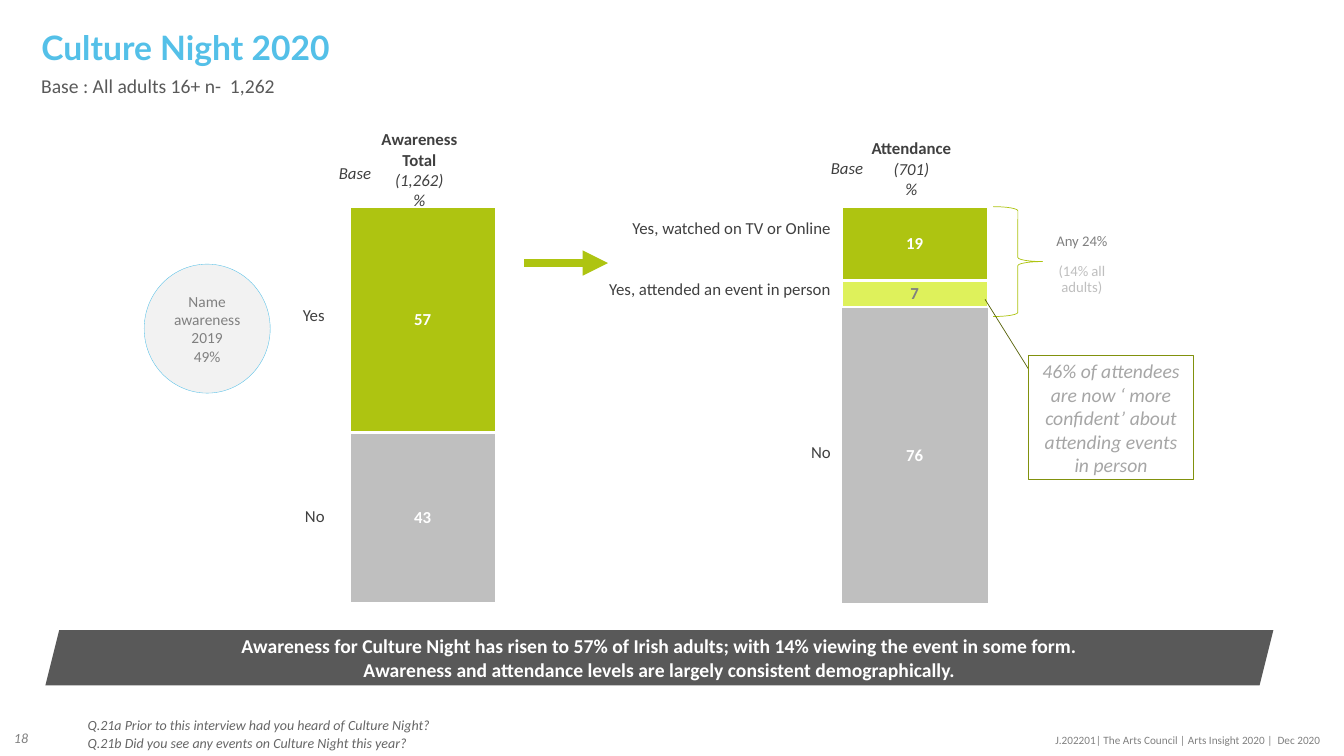
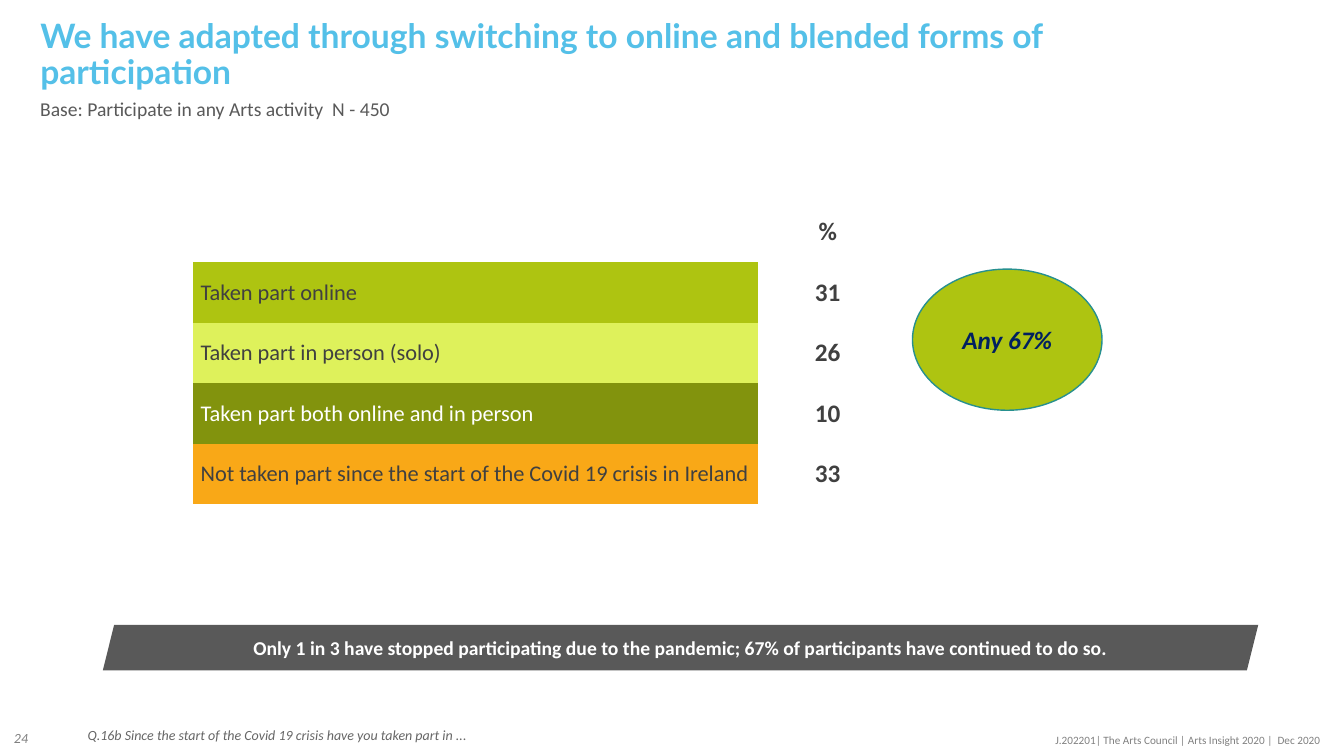
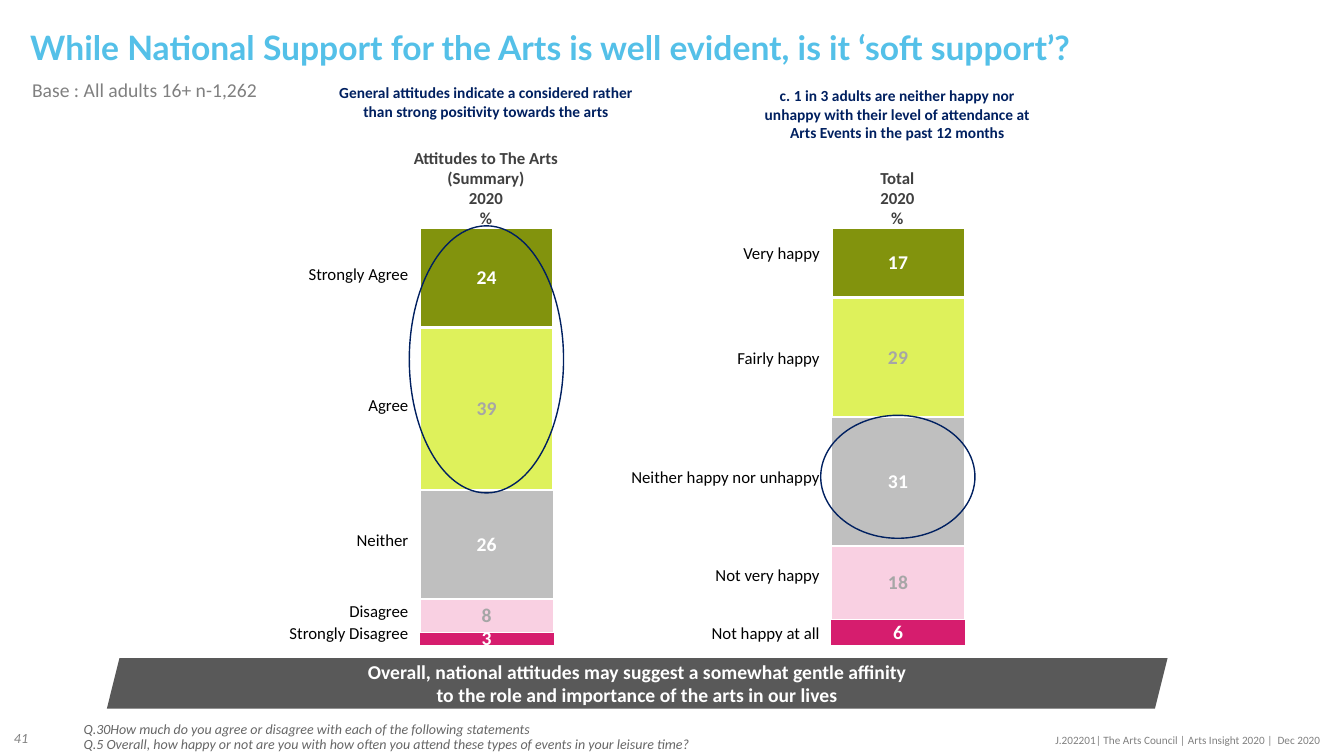
from lxml.etree import SubElement
from pptx import Presentation
from pptx.chart.data import CategoryChartData
from pptx.dml.color import RGBColor
from pptx.enum.chart import XL_CHART_TYPE as ChartType, XL_LABEL_POSITION as LabelPos
from pptx.enum.shapes import MSO_CONNECTOR as Connector, MSO_SHAPE as Shape
from pptx.enum.text import MSO_ANCHOR as Anchor, MSO_AUTO_SIZE as AutoSize, PP_ALIGN as Align
from pptx.oxml.ns import qn
from pptx.util import Inches, Pt

COLORS = {
    "sky": "54C0E8", "white": "FFFFFF", "black": "000000", "navy": "002060",
    "lime": "AEC411", "pale_lime": "DEF15B", "olive": "82930D", "frame_olive": "81910D",
    "dark_olive": "576208", "orange": "F9A817", "pink": "F9D0E2", "magenta": "D61D6E",
    "teal": "27908F", "charcoal": "595959", "ink": "404040", "note": "666666",
    "mid_gray": "808080", "soft_gray": "A6A6A6", "silver": "BFBFBF", "mist": "F2F2F2",
}
NO_STYLE_TABLE = "{2D5ABB26-0587-4C30-8999-92F81FD0307C}"
FOOTER = "J.202201| The Arts Council | Arts Insight 2020 |  Dec 2020"
LEFT, CENTER, RIGHT = Align.LEFT, Align.CENTER, Align.RIGHT


def rgb(name):
    return RGBColor.from_string(COLORS[name])


def inches(box):
    return [Inches(length) for length in box]


def set_font(font, size, color, bold=False, italic=False, face="Calibri"):
    font.name, font.size = face, Pt(size)
    font.bold, font.italic = bold, italic
    font.color.rgb = rgb(color)


def write(frame, lines, align=LEFT, spacing=None, gap=0, anchor=Anchor.TOP, **style):
    """Fill a frame; a line is a string or (string, changes of style)."""
    frame.word_wrap = True
    frame.auto_size = AutoSize.NONE
    frame.vertical_anchor = anchor
    for index, line in enumerate(lines):
        text, changes = (line, {}) if isinstance(line, str) else line
        paragraph = frame.add_paragraph() if index else frame.paragraphs[0]
        paragraph.text = text
        paragraph.alignment = align
        if spacing:
            paragraph.line_spacing = spacing
        if index and gap:
            paragraph.space_before = Pt(gap)
        set_font(paragraph.font, **{**style, **changes})


def text_box(slide, box, lines, **style):
    write(slide.shapes.add_textbox(*inches(box)).text_frame, lines, **style)


def outline(line, color=None, width=1):
    if color:
        line.color.rgb = rgb(color)
        line.width = Pt(width)
    else:
        line.fill.background()


def add_shape(slide, kind, box, fill=None, line=None, width=1):
    shape = slide.shapes.add_shape(kind, *inches(box))
    shape.shadow.inherit = False
    if fill:
        shape.fill.solid()
        shape.fill.fore_color.rgb = rgb(fill)
    else:
        shape.fill.background()
    outline(shape.line, line, width)
    return shape


def add_line(slide, start, end, color, width, arrow=False):
    connector = slide.shapes.add_connector(Connector.STRAIGHT, *inches(start + end))
    outline(connector.line, color, width)
    properties = connector._element.spPr
    if arrow:
        SubElement(properties.find(qn("a:ln")), qn("a:tailEnd"), type="triangle")
    SubElement(properties, qn("a:effectLst"))


# Parts shared by all slides

def start_slide(deck, number, title, title_box, base, base_box, base_color="charcoal"):
    slide = deck.slides.add_slide(deck.slide_layouts[5])
    heading = slide.shapes.title
    heading.left, heading.top, heading.width, heading.height = inches(title_box)
    write(heading.text_frame, [title], spacing=0.9, size=24, color="sky", bold=True, face="Lato")
    text_box(slide, base_box, [base], spacing=0.9, size=14, color=base_color)
    text_box(slide, (0.04, 7.12, 0.58, 0.4), [number], anchor=Anchor.MIDDLE,
             size=10, color="mid_gray", italic=True)
    text_box(slide, (10.3, 7.23, 2.9, 0.37), [FOOTER], align=RIGHT, size=8, color="mid_gray")
    return slide


def question_notes(slide, left, notes, spacing):
    for top, question in notes:
        text_box(slide, (left, top, 9.48, 0.2), [question], spacing=spacing,
                 size=10, color="note", italic=True)


def conclusion_band(slide, box, lines):
    frame = add_shape(slide, Shape.PARALLELOGRAM, box, "charcoal").text_frame
    frame.margin_left = frame.margin_right = frame.margin_top = frame.margin_bottom = 0
    write(frame, lines, align=CENTER, anchor=Anchor.MIDDLE, size=14, color="white", bold=True)


# Tables and charts

def plain_table(slide, box, widths, heights):
    table = slide.shapes.add_table(len(heights), len(widths), *inches(box)).table
    table._tbl.tblPr.find(qn("a:tableStyleId")).text = NO_STYLE_TABLE
    table.first_row = table.horz_banding = False
    for column, width in zip(table.columns, widths):
        column.width = Inches(width)
    for row, height in zip(table.rows, heights):
        row.height = Inches(height)
    return table


def fill_cell(cell, text, fill=None, indent=0.01, anchor=Anchor.TOP, **style):
    cell.margin_left = Inches(indent)
    cell.margin_right = cell.margin_top = Inches(0.01)
    cell.margin_bottom = 0
    cell.vertical_anchor = anchor
    if fill:
        cell.fill.solid()
        cell.fill.fore_color.rgb = rgb(fill)
    else:
        cell.fill.background()
    paragraph = cell.text_frame.paragraphs[0]
    paragraph.text = text
    paragraph.alignment = style.pop("align", LEFT)
    set_font(paragraph.font, **style)


def bar_labels(slide, right, top, width, labels, color):
    """Right-aligned labels beside a bar, as (text, row height)."""
    heights = [height for _, height in labels]
    table = plain_table(slide, (right - width, top, width, sum(heights)), [width], heights)
    for row, (text, _) in enumerate(labels):
        fill_cell(table.cell(row, 0), text, align=RIGHT, size=12, color=color)


def place_plot(chart, plot):
    area = chart._chartSpace.chart.plotArea
    for old in area.findall(qn("c:layout")):
        area.remove(old)
    layout = SubElement(area, qn("c:layout"))
    area.insert(0, layout)
    manual = SubElement(layout, qn("c:manualLayout"))
    settings = [("layoutTarget", "inner"), ("xMode", "edge"), ("yMode", "edge")]
    for tag, value in settings + list(zip("xywh", plot)):
        SubElement(manual, qn(f"c:{tag}"), val=str(value))


def stacked_bar(slide, box, plot, parts, label_size):
    """One 100% bar; a part is (value, fill, label colour, outline width)."""
    data = CategoryChartData(number_format="0")
    data.categories = ["1"]
    for index, part in enumerate(parts, 1):
        data.add_series(f"Series {index}", [part[0]])
    chart = slide.shapes.add_chart(ChartType.COLUMN_STACKED_100, *inches(box), data).chart
    chart.has_legend = chart.has_title = False
    set_font(chart.font, 12, "white", bold=True)
    chart.category_axis.visible = chart.value_axis.visible = False
    chart.value_axis.has_major_gridlines = False
    chart.value_axis.reverse_order = True
    bars = chart.plots[0]
    bars.gap_width, bars.overlap, bars.vary_by_categories = 70, 100, False
    for series, (_, fill, label_color, width) in zip(bars.series, parts):
        series.format.fill.solid()
        series.format.fill.fore_color.rgb = rgb(fill)
        outline(series.format.line, "white" if width else None, width)
        labels = series.data_labels
        labels.show_value = True
        labels.number_format, labels.number_format_is_linked = "0", False
        labels.position = LabelPos.CENTER
        set_font(labels.font, label_size, label_color, bold=True)
    place_plot(chart, plot)


# Culture Night

def culture_bar(slide, box, parts, heading, heading_bottom, base_top):
    left = box[0]
    stacked_bar(slide, box, (0.05, 0.03, 0.94, 0.92), parts, 12)
    text_box(slide, (left + 0.81, heading_bottom - 0.91, 1.06, 0.91), heading, align=CENTER,
             anchor=Anchor.BOTTOM, size=12, color="ink", bold=True)
    text_box(slide, (left + 0.25, base_top, 0.71, 0.3), ["Base"], align=RIGHT,
             size=12, color="ink", italic=True)


def attendance_notes(slide, left, top):
    add_shape(slide, Shape.RIGHT_BRACE, (left, top, 0.49, 1.09), line="lime", width=0.5)
    text_box(slide, (left + 0.49, top + 0.22, 0.78, 0.35),
             ["Any 24%", ("(14% all adults)", {"color": "silver"})],
             align=CENTER, spacing=0.9, gap=10, size=10.5, color="mid_gray")
    add_line(slide, (left - 0.08, top + 0.92), (left + 0.35, top + 1.61), "dark_olive", 0.5)
    confidence = add_shape(slide, Shape.RECTANGLE, (left + 0.35, top + 1.48, 1.64, 1.23),
                           line="frame_olive")
    write(confidence.text_frame,
          ["46% of attendees are now ‘ more confident’ about attending events in person"],
          align=CENTER, anchor=Anchor.MIDDLE, size=14, color="soft_gray", italic=True)


def culture_night(deck):
    slide = start_slide(deck, "18", "Culture Night 2020", (0.31, 0.26, 10.7, 0.41),
                        "Base : All adults 16+ n-  1,262", (0.31, 0.71, 7.47, 0.35))
    question_notes(slide, 0.77, [
        (7.16, "Q.21a Prior to this interview had you heard of Culture Night?"),
        (7.34, "Q.21b Did you see any events on Culture Night this year?")], 0.3)
    conclusion_band(slide, (0.45, 6.25, 12.18, 0.55), [
        "Awareness for Culture Night has risen to 57% of Irish adults; "
        "with 14% viewing the event in some form.",
        "Awareness and attendance levels are largely consistent demographically."])

    light = {"bold": False, "italic": True}
    culture_bar(slide, (2.82, 1.92, 2.64, 4.28),
                [(57, "lime", "white", 2.04), (43, "silver", "white", 2.04)],
                ["Awareness", "Total", ("(1,262)", light), ("%", light)], 2.13, 1.57)
    culture_bar(slide, (7.7, 1.92, 2.64, 4.28),
                [(19, "lime", "white", 2.04), (7, "pale_lime", "mid_gray", 2.04),
                 (76, "silver", "white", 0.75)],
                ["Attendance", ("(701)", light), ("%", light)], 2.02, 1.52)
    bar_labels(slide, 3.23, 3.02, 0.81, [("Yes", 2), ("No", 0.22)], "ink")
    bar_labels(slide, 8.25, 2.16, 2.52, [
        ("Yes, watched on TV or Online", 0.6), ("Yes, attended an event in person", 1.62),
        ("No", 0.22)], "ink")

    # Earlier awareness, arrow to attendance
    add_line(slide, (5.2, 2.61), (6.03, 2.61), "lime", 6, arrow=True)
    awareness = add_shape(slide, Shape.OVAL, (1.43, 2.62, 1.25, 1.28), "mist", "sky", 0.25)
    write(awareness.text_frame, ["Name awareness 2019", "49%"], align=CENTER,
          anchor=Anchor.MIDDLE, size=11, color="mid_gray")
    attendance_notes(slide, 9.85, 2.05)


# Online and blended participation

def participation_table(slide, left, top):
    rows = [("Taken part online", "31", "lime", "ink"),
            ("Taken part in person (solo)", "26", "pale_lime", "ink"),
            ("Taken part both online and in person", "10", "olive", "white"),
            ("Not taken part since the start of the Covid 19 crisis in Ireland", "33",
             "orange", "ink")]
    heights = [0.6] * (len(rows) + 1)
    table = plain_table(slide, (left, top, 6.99, sum(heights)), [5.61, 1.38], heights)
    share = dict(anchor=Anchor.MIDDLE, align=CENTER, size=18, color="ink", bold=True)
    table.cell(0, 0).fill.background()
    fill_cell(table.cell(0, 1), "%", **share)
    for row, (activity, percent, fill, color) in enumerate(rows, 1):
        fill_cell(table.cell(row, 0), activity, fill, 0.08, Anchor.MIDDLE, size=16, color=color)
        fill_cell(table.cell(row, 1), percent, **share)


def participation(deck):
    slide = start_slide(
        deck, "24",
        "We have adapted through switching to online and blended forms of participation",
        (0.3, 0.14, 10.2, 0.41),
        "Base: Participate in any Arts activity  N - 450", (0.3, 0.94, 7.47, 0.35))
    question_notes(slide, 0.77, [
        (7.18, "Q.16b Since the start of the Covid 19 crisis have you taken part in ...")], 0.9)
    conclusion_band(slide, (1.02, 6.2, 11.46, 0.45), [
        "Only 1 in 3 have stopped participating due to the pandemic; "
        "67% of participants have continued to do so."])
    participation_table(slide, 1.91, 2)
    any_share = add_shape(slide, Shape.OVAL, (9.05, 2.67, 1.88, 1.4), "lime", "teal")
    write(any_share.text_frame, ["Any 67%"], align=CENTER, anchor=Anchor.MIDDLE,
          size=18, color="navy", bold=True, italic=True)


# Support for the arts

def support_panel(slide, box, values, labels, label_top, label_width, heading,
                  caption, caption_top, caption_width, ring_top, ring_height):
    left, top = box[:2]
    middle = left + 1.12
    looks = [("olive", "white", 2.04), ("pale_lime", "soft_gray", 2.04),
             ("silver", "white", 1), ("pink", "soft_gray", 1.5), ("magenta", "white", 0)]
    stacked_bar(slide, box, (0, 0, 0.94, 0.97),
                [(value, *look) for value, look in zip(values, looks)], 14)
    bar_labels(slide, left + 0.36, label_top, label_width, labels, "black")
    text_box(slide, (middle - 0.85, top - 0.84, 1.7, 0.91), heading, align=CENTER,
             anchor=Anchor.BOTTOM, size=12, color="ink", bold=True)
    text_box(slide, (middle - caption_width / 2, caption_top, caption_width, 0.66), [caption],
             align=CENTER, size=11, color="navy", bold=True)
    add_shape(slide, Shape.OVAL, (left + 0.36, ring_top, 1.53, ring_height), line="navy")


def soft_support(deck):
    slide = start_slide(
        deck, "41", "While National Support for the Arts is well evident, is it ‘soft support’?",
        (0.2, 0.26, 11.42, 0.41),
        "Base : All adults 16+ n-1,262", (0.22, 0.75, 6.07, 0.35), "mid_gray")
    question_notes(slide, 0.73, [
        (7.18, "Q.30How much do you agree or disagree with each of the following statements"),
        (7.33, "Q.5 Overall, how happy or not are you with how often you attend "
               "these types of events in your leisure time?")], 0.4)
    conclusion_band(slide, (1.06, 6.53, 10.52, 0.5), [
        "Overall, national attitudes may suggest a somewhat gentle affinity",
        "to the role and importance of the arts in our lives"])
    support_panel(
        slide, (3.7, 2.24, 2.4, 4.29), [24, 39, 26, 8, 3],
        [("Strongly Agree", 1.3), ("Agree", 1.34), ("Neither", 0.71), ("Disagree", 0.15),
         ("Strongly Disagree", 0.12)], 2.61, 2.24,
        ["Attitudes to The Arts (Summary)", "2020", "%"],
        "General attitudes indicate a considered rather than strong positivity towards the arts",
        0.78, 3.19, 2.24, 2.65)
    support_panel(
        slide, (7.78, 2.24, 2.4, 4.29), [17, 29, 31, 18, 6],
        [("Very happy", 1.04), ("Fairly happy", 1.18), ("Neither happy nor unhappy", 0.97),
         ("Not very happy", 0.58), ("Not happy at all", 0.12)], 2.41, 1.89,
        ["Total", "2020", "%"],
        "c. 1 in 3 adults are neither happy nor unhappy with their level of attendance "
        "at Arts Events in the past 12 months",
        0.81, 2.85, 4.12, 1.22)


def main():
    deck = Presentation()
    deck.slide_width, deck.slide_height = Inches(13.33), Inches(7.5)
    culture_night(deck)
    participation(deck)
    soft_support(deck)
    deck.save("out.pptx")


if __name__ == "__main__":
    main()
